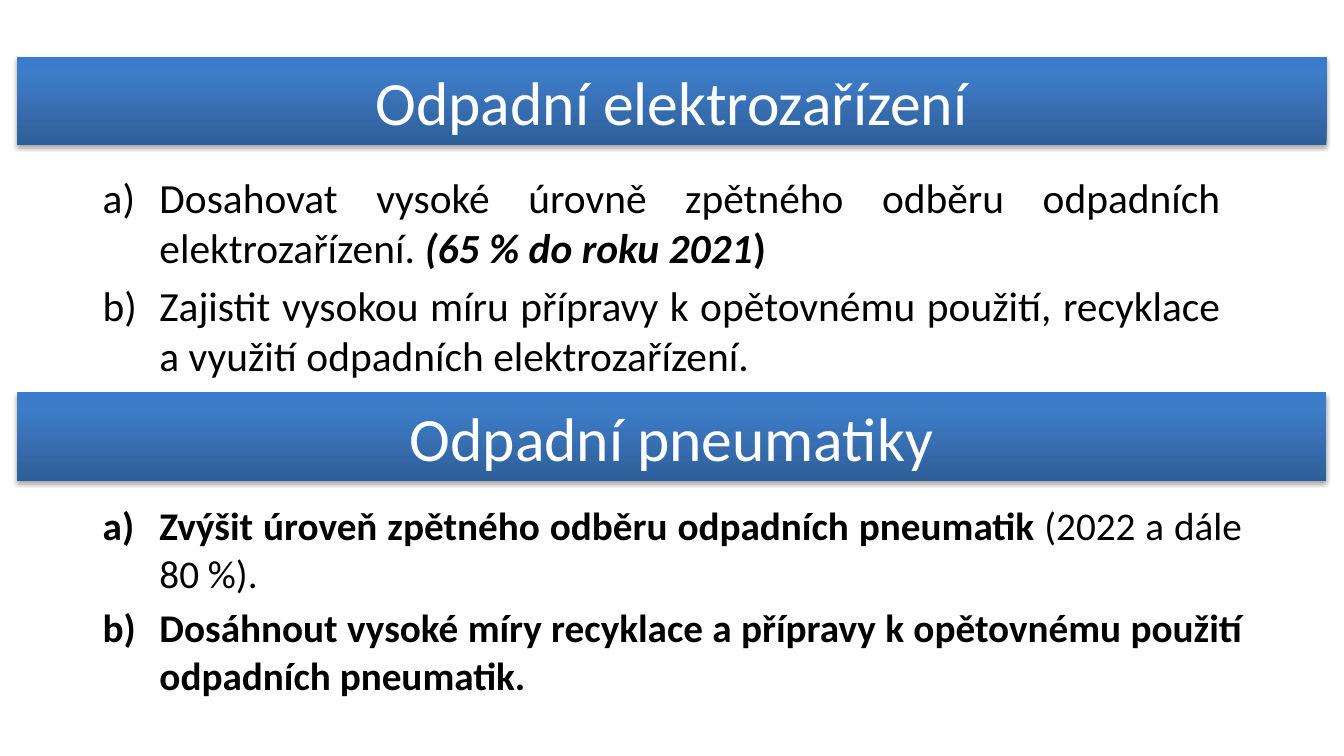
from pptx import Presentation
from pptx.dml.color import RGBColor
from pptx.enum.shapes import MSO_SHAPE
from pptx.enum.text import MSO_ANCHOR, MSO_AUTO_SIZE, PP_ALIGN
from pptx.oxml import parse_xml
from pptx.oxml.ns import nsdecls
from pptx.util import Cm, Pt

BLACK = RGBColor(0x00, 0x00, 0x00)
WHITE = RGBColor(0xFF, 0xFF, 0xFF)
BAR_DARK = RGBColor(0x2F, 0x5F, 0x99)
BAR_MID = RGBColor(0x3D, 0x7C, 0xC7)
BAR_LIGHT = RGBColor(0x3A, 0x7C, 0xCB)
BAR_STOPS = [(0, BAR_DARK), (80, BAR_MID), (100, BAR_LIGHT)]
INDENT = Cm(1.43)


def add_run(p, text, size, color, **styles):
    r = p.add_run()
    r.text = text
    r.font.color.rgb = color
    for name, value in {"name": "Calibri", "size": Pt(size), **styles}.items():
        setattr(r.font, name, value)


def style_bar(sp):
    """Give a heading bar its vertical gradient, no outline and a soft shadow."""
    stops = "".join(
        f'<a:gs pos="{pos * 1000}"><a:srgbClr val="{color}"/></a:gs>'
        for pos, color in BAR_STOPS)
    shadow = (f'<a:outerShdw blurRad="{Pt(3.1)}" dist="{Pt(1.8)}" dir="5400000" rotWithShape="0">'
              f'<a:srgbClr val="{BLACK}"><a:alpha val="35000"/></a:srgbClr></a:outerShdw>')
    ns = nsdecls("a")
    for xml in (
        f'<a:gradFill {ns} rotWithShape="1"><a:gsLst>{stops}</a:gsLst>'
        '<a:lin ang="16200000" scaled="0"/></a:gradFill>',
        f'<a:ln {ns}><a:noFill/></a:ln>',
        f'<a:effectLst {ns}>{shadow}</a:effectLst>',
    ):
        sp._element.spPr.append(parse_xml(xml))


prs = Presentation()
prs.slide_width, prs.slide_height = Cm(33.87), Cm(19.05)
s = prs.slides.add_slide(prs.slide_layouts[5])

# Heading bars
title = s.shapes.title
title.left, title.top, title.width, title.height = Cm(0.43), Cm(1.43), Cm(33), Cm(2.22)
tyres_bar = s.shapes.add_shape(
    MSO_SHAPE.RECTANGLE, title.left, Cm(9.89), title.width, title.height)

for sp, heading in ((title, "Odpadní elektrozařízení"), (tyres_bar, "Odpadní pneumatiky")):
    style_bar(sp)
    tf = sp.text_frame
    tf.auto_size = MSO_AUTO_SIZE.NONE
    tf.vertical_anchor = MSO_ANCHOR.MIDDLE
    p = tf.paragraphs[0]
    p.alignment = PP_ALIGN.CENTER
    add_run(p, heading, 44, WHITE)

# Lettered goals: top, width, height, text size, paragraphs of (text, styles)
bold = {"bold": True}
goals = [
    (Cm(4.22), Cm(28.7), Cm(4.95), 29.6, [
        [("Dosahovat vysoké úrovně zpětného odběru odpadních elektrozařízení. ", {}),
         ("(65 % do roku 2021", {"bold": True, "italic": True}),
         (")", bold)],
        [("Zajistit vysokou míru přípravy k opětovnému použití, recyklace "
          "a využití odpadních elektrozařízení.", {})],
    ]),
    (Cm(12.52), Cm(29.21), Cm(5.84), 28, [
        [("Zvýšit úroveň zpětného odběru odpadních pneumatik ", bold),
         ("(2022 a dále 80 %).", {})],
        [("Dosáhnout vysoké míry recyklace a přípravy k opětovnému použití "
          "odpadních pneumatik.", bold)],
    ]),
]

for top, width, height, size, paragraphs in goals:
    tf = s.shapes.add_textbox(Cm(2.34), top, width, height).text_frame
    tf.word_wrap = True
    for i, runs in enumerate(paragraphs):
        p = tf.add_paragraph() if i else tf.paragraphs[0]
        p.alignment = PP_ALIGN.JUSTIFY
        p.space_before = Pt(size * 0.2)
        pPr = p._p.get_or_add_pPr()
        pPr.set("marL", str(INDENT))
        pPr.set("indent", str(-INDENT))
        for xml in (
            f'<a:buClr {nsdecls("a")}><a:srgbClr val="{BLACK}"/></a:buClr>',
            f'<a:buFont {nsdecls("a")} typeface="+mj-lt"/>',
            f'<a:buAutoNum {nsdecls("a")} type="alphaLcParenR"/>',
        ):
            pPr.append(parse_xml(xml))
        for text, styles in runs:
            add_run(p, text, size, BLACK, **styles)

prs.save("out.pptx")
